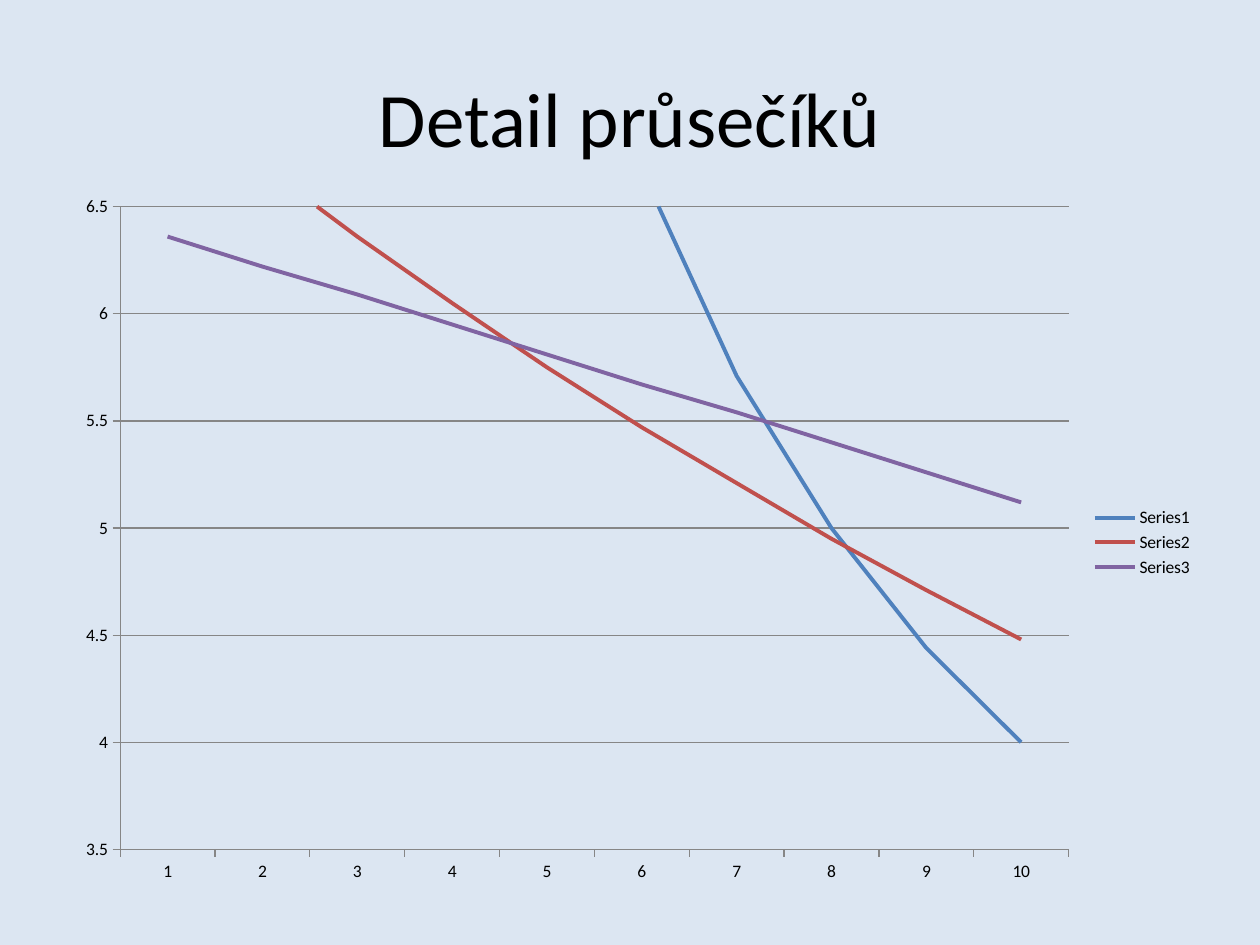
from dataclasses import dataclass

from lxml import etree
from pptx import Presentation
from pptx.chart.chart import Chart
from pptx.chart.data import CategoryChartData
from pptx.dml.color import RGBColor
from pptx.dml.line import LineFormat
from pptx.enum.chart import XL_CHART_TYPE, XL_LEGEND_POSITION, XL_MARKER_STYLE, XL_TICK_MARK
from pptx.enum.text import MSO_ANCHOR, PP_ALIGN
from pptx.oxml.ns import qn
from pptx.slide import Slide
from pptx.text.text import Font
from pptx.util import Inches, Pt

COLORS = {
    "background": "DCE6F2",
    "text": "000000",
    "axis": "868686",
    "blue": "4F81BD",
    "red": "C0504D",
    "purple": "8064A2",
}
PLOT_LAYOUT = {
    "layoutTarget": "inner", "xMode": "edge", "yMode": "edge",
    "x": 0.05, "y": 0.03, "w": 0.83, "h": 0.9,
}


@dataclass
class Curve:
    name: str
    color: str
    values: list[float]


CURVES = [
    Curve("Series1", "blue", [40, 20, 13.33, 10, 8, 6.67, 5.71, 5, 4.44, 4]),
    Curve("Series2", "red", [7.03, 6.69, 6.36, 6.05, 5.75, 5.47, 5.21, 4.95, 4.71, 4.48]),
    Curve("Series3", "purple", [6.36, 6.22, 6.09, 5.95, 5.81, 5.67, 5.54, 5.4, 5.26, 5.12]),
]


def rgb(name: str) -> RGBColor:
    return RGBColor.from_string(COLORS[name])


def set_all(target: object, values: dict) -> None:
    for attribute, value in values.items():
        setattr(target, attribute, value)


def format_font(font: Font, size: float) -> None:
    set_all(font, {"name": "Calibri", "size": Pt(size), "bold": False})
    font.color.rgb = rgb("text")


def format_line(line: LineFormat, color: str, width: float) -> None:
    line.color.rgb = rgb(color)
    line.width = Pt(width)


def add_title(slide: Slide, wording: str) -> None:
    heading = slide.shapes.title
    set_all(heading, {"left": Inches(0.5), "top": Inches(0.3),
                      "width": Inches(9), "height": Inches(1.25)})
    heading.text_frame.text = wording
    heading.text_frame.vertical_anchor = MSO_ANCHOR.MIDDLE
    paragraph = heading.text_frame.paragraphs[0]
    paragraph.alignment = PP_ALIGN.CENTER
    format_font(paragraph.runs[0].font, 44)


def place_plot(chart: Chart) -> None:
    plot_area = chart.plots[0]._element.getparent()
    for previous in plot_area.findall(qn("c:layout")):
        plot_area.remove(previous)
    layout = etree.Element(qn("c:layout"))
    manual = etree.SubElement(layout, qn("c:manualLayout"))
    for tag, value in PLOT_LAYOUT.items():
        etree.SubElement(manual, qn(f"c:{tag}")).set("val", str(value))
    plot_area.insert(0, layout)


def add_curves(slide: Slide, curves: list[Curve]) -> None:
    chart_data = CategoryChartData()
    chart_data.categories = [str(number) for number in range(1, 11)]
    for curve in curves:
        chart_data.add_series(curve.name, curve.values)
    chart = slide.shapes.add_chart(
        XL_CHART_TYPE.LINE, Inches(0.5), Inches(1.47), Inches(9.07), Inches(5.67), chart_data
    ).chart
    set_all(chart, {"has_title": False, "has_legend": True})
    set_all(chart.legend, {"position": XL_LEGEND_POSITION.RIGHT, "include_in_layout": False})
    format_font(chart.font, 10)
    chart.plots[0].vary_by_categories = False

    set_all(chart.value_axis, {"minimum_scale": 3.5, "maximum_scale": 6.5,
                               "major_unit": 0.5, "has_major_gridlines": True})
    for axis in (chart.category_axis, chart.value_axis):
        set_all(axis, {"major_tick_mark": XL_TICK_MARK.OUTSIDE,
                       "minor_tick_mark": XL_TICK_MARK.NONE})
        format_line(axis.format.line, "axis", 0.75)
    format_line(chart.value_axis.major_gridlines.format.line, "axis", 0.75)

    for series, curve in zip(chart.plots[0].series, curves):
        series.smooth = False
        series.marker.style = XL_MARKER_STYLE.NONE
        format_line(series.format.line, curve.color, 2.25)
    place_plot(chart)


def main() -> None:
    deck = Presentation()
    set_all(deck, {"slide_width": Inches(10), "slide_height": Inches(7.5)})
    slide = deck.slides.add_slide(deck.slide_layouts.get_by_name("Title Only"))
    slide.background.fill.solid()
    slide.background.fill.fore_color.rgb = rgb("background")
    add_title(slide, "Detail průsečíků")
    add_curves(slide, CURVES)
    deck.save("out.pptx")


if __name__ == "__main__":
    main()
